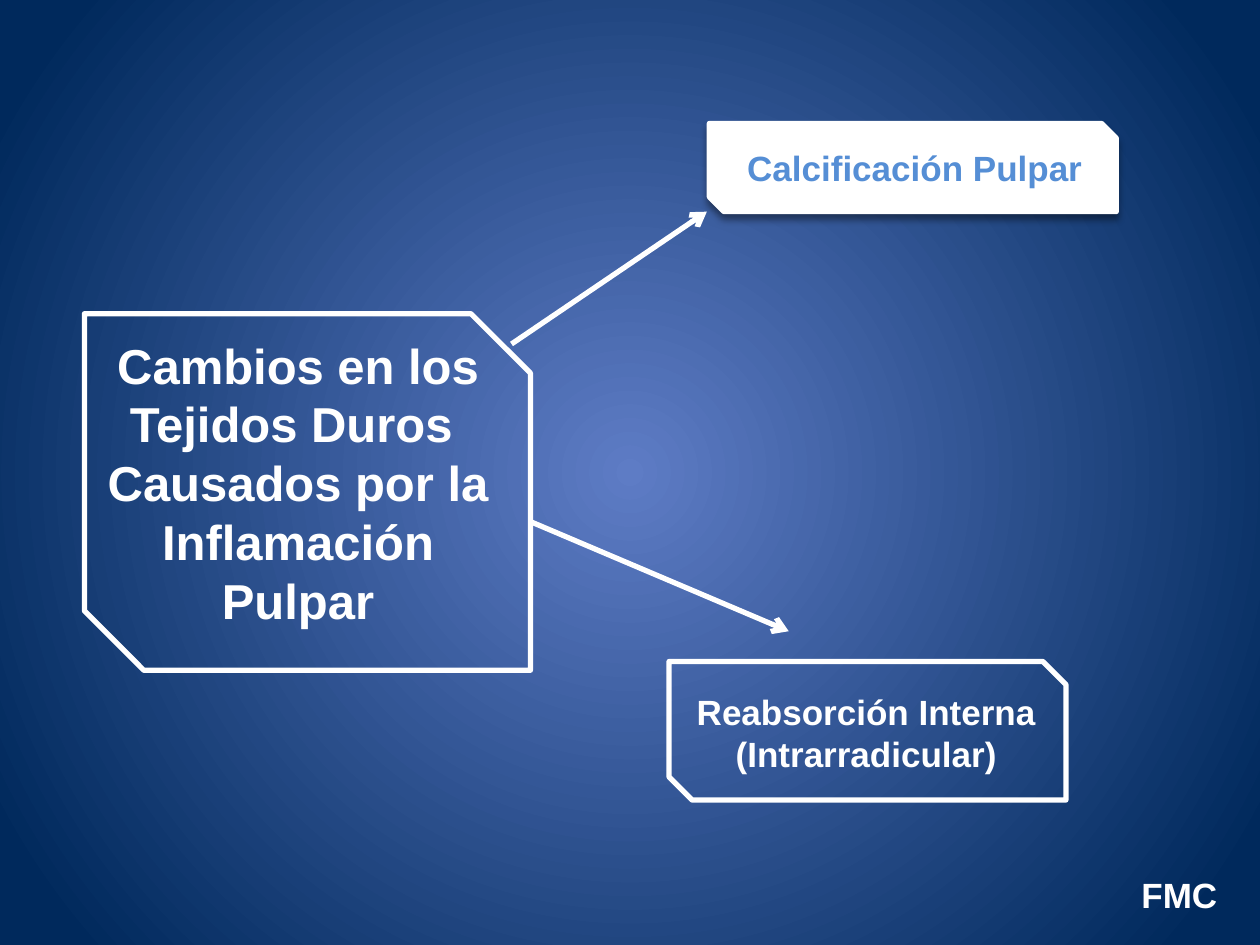
from lxml import etree
from pptx import Presentation
from pptx.dml.color import RGBColor
from pptx.enum.shapes import MSO_CONNECTOR, MSO_SHAPE
from pptx.enum.text import MSO_ANCHOR, MSO_AUTO_SIZE, PP_ALIGN
from pptx.oxml.ns import qn
from pptx.util import Inches, Pt

SNIP = MSO_SHAPE.SNIP_2_DIAG_RECTANGLE
LINE = MSO_CONNECTOR.STRAIGHT
MID, TOP = MSO_ANCHOR.MIDDLE, MSO_ANCHOR.TOP
GROW, FIXED = MSO_AUTO_SIZE.SHAPE_TO_FIT_TEXT, MSO_AUTO_SIZE.NONE
MID_AL, RIGHT = PP_ALIGN.CENTER, PP_ALIGN.RIGHT

HUES = {"white": "FFFFFF", "sky": "558ED5", "glow": "5E7CC5",
        "navy": "00295C", "black": "000000"}
COLS, ROWS = 100, 75  # grid cells across and down


def hue(name):
    return RGBColor.from_string(HUES[name])


def node(base, tag, **attrs):
    return etree.SubElement(base, qn(tag), {k: str(v) for k, v in attrs.items()})


class Deck:
    font, edge = "Arial", Pt(3)

    def __init__(self, wide, high):
        self.prs = Presentation()
        self.prs.slide_width, self.prs.slide_height = Inches(wide), Inches(high)
        self.slide = self.prs.slides.add_slide(self.prs.slide_layouts[6])

    def grid(self, *cells):
        """Turn column, row pairs into lengths."""
        units = self.prs.slide_width / COLS, self.prs.slide_height / ROWS
        return [round(c * units[i % 2]) for i, c in enumerate(cells)]

    def glow(self, inner, outer, reach):
        fill = self.slide.background.fill
        fill.gradient()
        stops = zip(fill.gradient_stops, (inner, outer), (0, reach))
        for stop, name, place in stops:
            stop.color.rgb, stop.position = hue(name), place
        grad = self.slide.element.find(".//" + qn("a:gradFill"))
        grad.remove(grad.find(qn("a:lin")))
        path = node(grad, "a:path", path="circle")
        node(path, "a:fillToRect", l=50000, t=50000, r=50000, b=50000)

    def text(self, area, lines, size=20, color="white", align=MID_AL,
             wrap=True, fit=GROW, anchor=TOP):
        frame = self.slide.shapes.add_textbox(*self.grid(*area)).text_frame
        frame.word_wrap, frame.auto_size = wrap, fit
        frame.vertical_anchor = anchor
        for i, line in enumerate(lines):
            para = frame.add_paragraph() if i else frame.paragraphs[0]
            para.alignment = align
            run = para.add_run()
            run.text = line
            font = run.font
            font.name, font.size, font.bold = self.font, Pt(size), True
            font.color.rgb = hue(color)

    def frame(self, area, fill=None, shade=False):
        box = self.slide.shapes.add_shape(SNIP, *self.grid(*area))
        box.shadow.inherit = False
        if fill:
            box.fill.solid()
            box.fill.fore_color.rgb = hue(fill)
        else:
            box.fill.background()
        box.line.color.rgb, box.line.width = hue("white"), self.edge
        if shade:
            drop = node(box.element.spPr.find(qn("a:effectLst")), "a:outerShdw",
                        blurRad=Pt(4), dist=Pt(3), dir=5400000, rotWithShape=0)
            tint = node(drop, "a:srgbClr", val=HUES["black"])
            node(tint, "a:alpha", val=40000)

    def arrow(self, start, end):
        link = self.slide.shapes.add_connector(LINE, *self.grid(*start, *end))
        link.line.color.rgb, link.line.width = hue("white"), self.edge
        node(link.line._get_or_add_ln(), "a:tailEnd", type="arrow")
        node(link.element.spPr, "a:effectLst")


def main():
    deck = Deck(10, 7.5)
    deck.glow("glow", "navy", 0.92)

    # Corner initials
    deck.text((88.9, 69, 8.7, 4), ["FMC"], align=RIGHT, fit=FIXED, anchor=MID)

    # Filled card behind the first outcome
    deck.frame((56.3, 9.8, 32.3, 7), fill="white", shade=True)

    # Cause and its two outcomes
    deck.text((6.7, 26.1, 33.9, 24.6),
              ["Cambios en los Tejidos Duros ",
               "Causados por la Inflamación Pulpar"], size=28)
    deck.text((58.2, 11.1, 28.8, 4.4), ["Calcificación Pulpar"],
              color="sky", wrap=False)
    deck.text((54.2, 54.3, 29.1, 7.7),
              ["Reabsorción Interna", "(Intrarradicular)"], wrap=False)

    # Outlines
    for area in ((6.7, 24.9, 35.4, 28.3), (53.1, 52.5, 31.5, 11)):
        deck.frame(area)

    # Arrows from cause to outcomes
    deck.arrow((40.6, 27.3), (56.1, 16.8))
    deck.arrow((42.1, 41.4), (62.6, 50.1))

    deck.prs.save("out.pptx")


if __name__ == "__main__":
    main()
